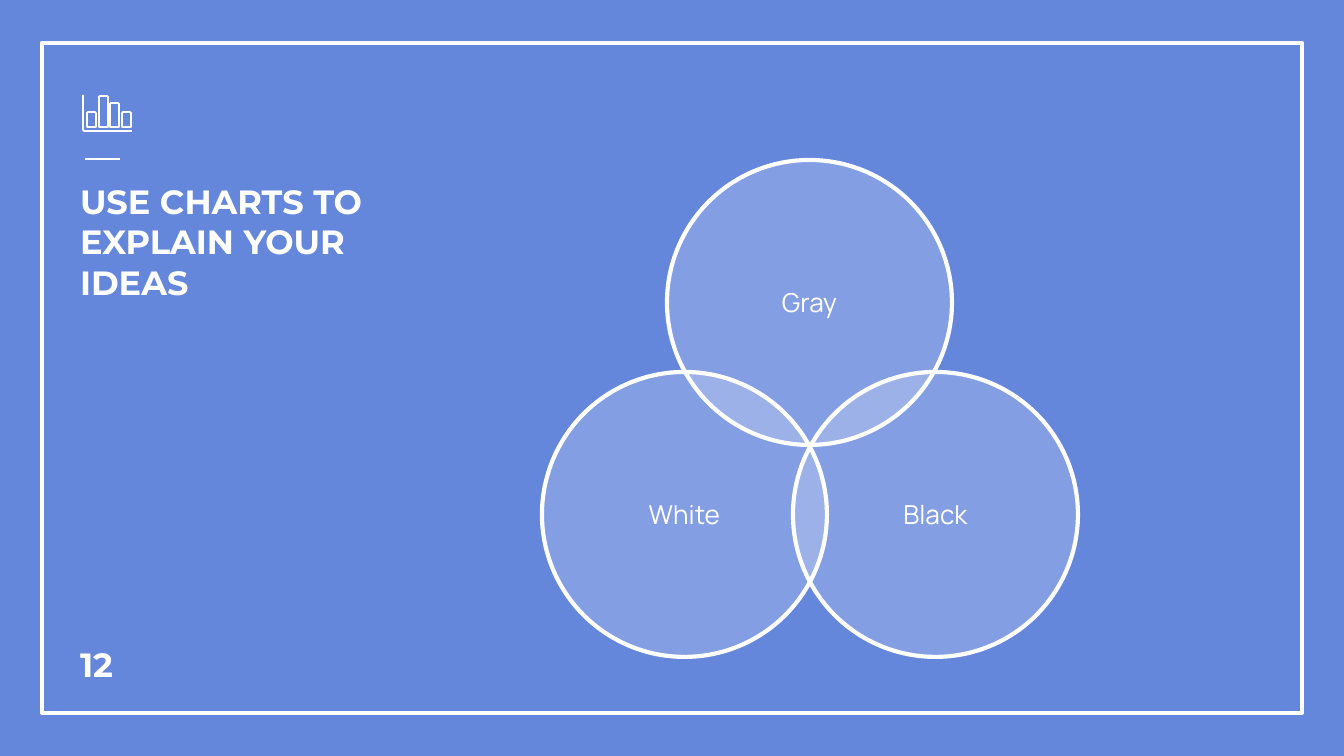
from lxml.etree import SubElement
from pptx import Presentation
from pptx.dml.color import RGBColor
from pptx.enum.shapes import MSO_CONNECTOR as CONNECTOR, MSO_SHAPE as SHAPE
from pptx.enum.text import MSO_ANCHOR as ANCHOR, PP_ALIGN as ALIGN
from pptx.oxml.ns import qn
from pptx.util import Pt

EMU_PER_PX = 914400 / 134.4
BLUE = RGBColor(0x64, 0x86, 0xDB)
WHITE = RGBColor(0xFF, 0xFF, 0xFF)

HEADING = {"name": "Montserrat", "size": Pt(18), "bold": True}
LABEL = {"name": "Manrope", "size": Pt(14), "bold": False}
INSET = 13

CIRCLE_SIZE = 285
CIRCLES = [("Gray", 667, 160), ("White", 542, 372), ("Black", 793, 372)]

BAR_TOPS = [112, 96, 103, 112]
BAR_LEFT, BAR_PITCH, BAR_WIDTH, BAR_BASE = 87, 11.7, 9, 127


def px(*lengths):
    return [round(length * EMU_PER_PX) for length in lengths]


def set_outline(shape, weight):
    shape.line.color.rgb = WHITE
    shape.line.width = Pt(weight)


def write_text(shape, text, style, anchor, align):
    frame = shape.text_frame
    frame.word_wrap = True
    frame.vertical_anchor = anchor
    for side in ("left", "top", "right", "bottom"):
        setattr(frame, f"margin_{side}", px(INSET)[0])
    paragraph = frame.paragraphs[0]
    paragraph.alignment = align
    run = paragraph.add_run()
    run.text = text
    run.font.color.rgb = WHITE
    for attribute, value in style.items():
        setattr(run.font, attribute, value)


def add_text(slide, text, box, anchor):
    shape = slide.shapes.add_textbox(*px(*box))
    write_text(shape, text, HEADING, anchor, ALIGN.LEFT)


def add_frame(slide):
    frame = slide.shapes.add_shape(SHAPE.RECTANGLE, *px(42, 43, 1260, 670))
    frame.shadow.inherit = False
    frame.fill.background()
    set_outline(frame, 2.25)


def add_rule(slide):
    rule = slide.shapes.add_connector(CONNECTOR.STRAIGHT, *px(85, 159, 120, 159))
    set_outline(rule, 0.75)
    SubElement(rule._element.spPr, qn("a:effectLst"))


def add_circle(slide, label, left, top):
    circle = slide.shapes.add_shape(
        SHAPE.OVAL, *px(left, top, CIRCLE_SIZE, CIRCLE_SIZE))
    circle.shadow.inherit = False
    circle.fill.solid()
    circle.fill.fore_color.rgb = WHITE
    color = circle._element.spPr.find(f"{qn('a:solidFill')}/{qn('a:srgbClr')}")
    SubElement(color, qn("a:alpha"), val="20000")
    set_outline(circle, 2.25)
    write_text(circle, label, LABEL, ANCHOR.MIDDLE, ALIGN.CENTER)


def add_outline(group, points, close):
    builder = group.shapes.build_freeform(*points[0], scale=EMU_PER_PX)
    builder.add_line_segments(points[1:], close=close)
    shape = builder.convert_to_shape()
    shape.shadow.inherit = False
    shape.fill.background()
    set_outline(shape, 0.96)


def add_chart_icon(slide):
    """Draw the axes and four bars with softened top corners."""
    group = slide.shapes.add_group_shape()
    axes = [(83, 95), (83, 130), (84, 131), (132, 131)]
    add_outline(group, axes, close=False)
    for index, top in enumerate(BAR_TOPS):
        left = round(BAR_LEFT + index * BAR_PITCH)
        right = left + BAR_WIDTH
        bar = [(right, BAR_BASE), (right, top + 1), (right - 1, top),
               (left + 1, top), (left, top + 1), (left, BAR_BASE)]
        add_outline(group, bar, close=True)


def main():
    presentation = Presentation()
    presentation.slide_width, presentation.slide_height = px(1344, 756)
    slide = presentation.slides.add_slide(presentation.slide_layouts[6])
    slide.background.fill.solid()
    slide.background.fill.fore_color.rgb = BLUE

    add_frame(slide)
    add_rule(slide)
    add_text(slide, "USE CHARTS TO EXPLAIN YOUR IDEAS", (67, 168, 317, 120), ANCHOR.TOP)
    for label, left, top in CIRCLES:
        add_circle(slide, label, left, top)
    add_text(slide, "12", (67, 616, 81, 81), ANCHOR.BOTTOM)
    add_chart_icon(slide)
    presentation.save("out.pptx")


if __name__ == "__main__":
    main()
